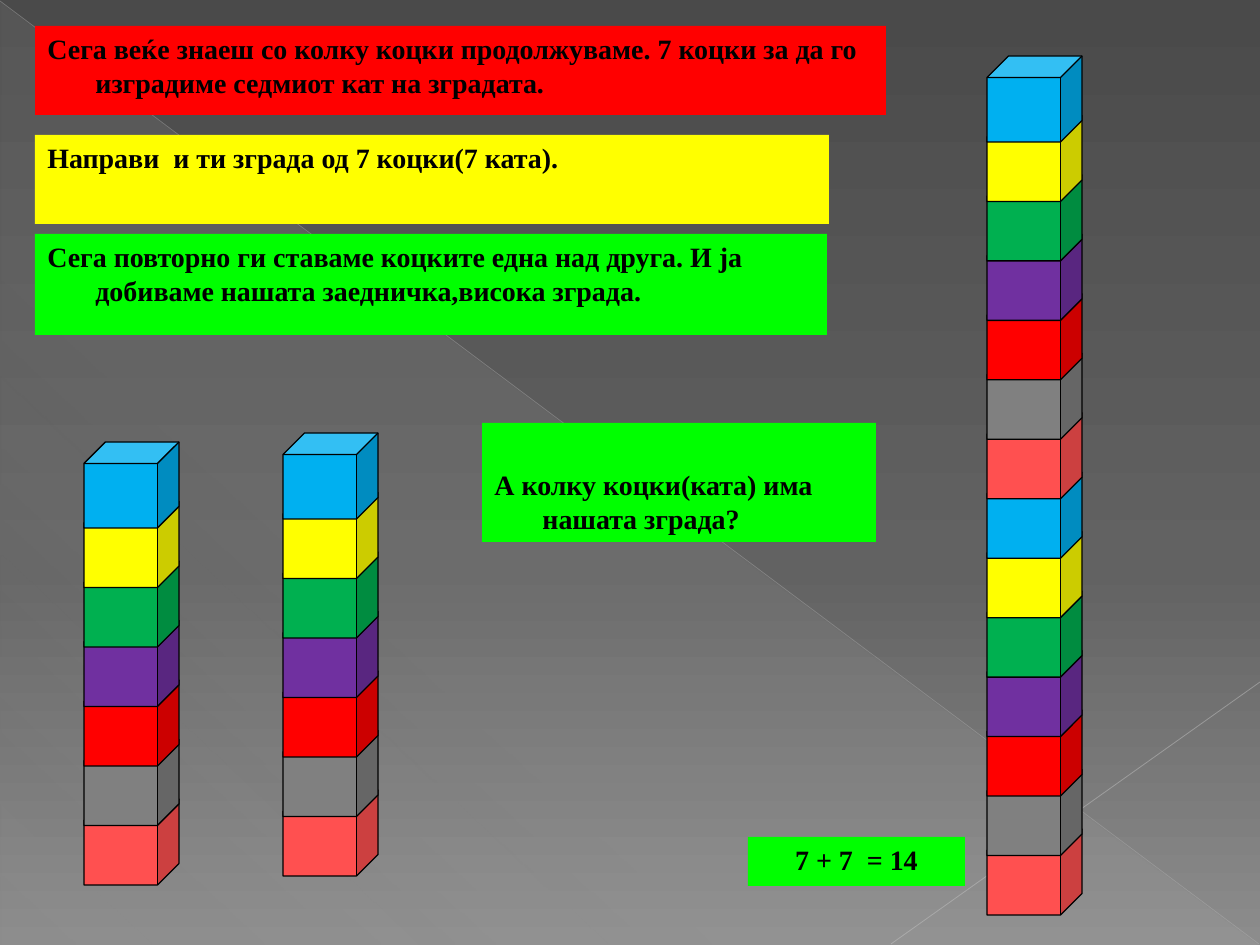
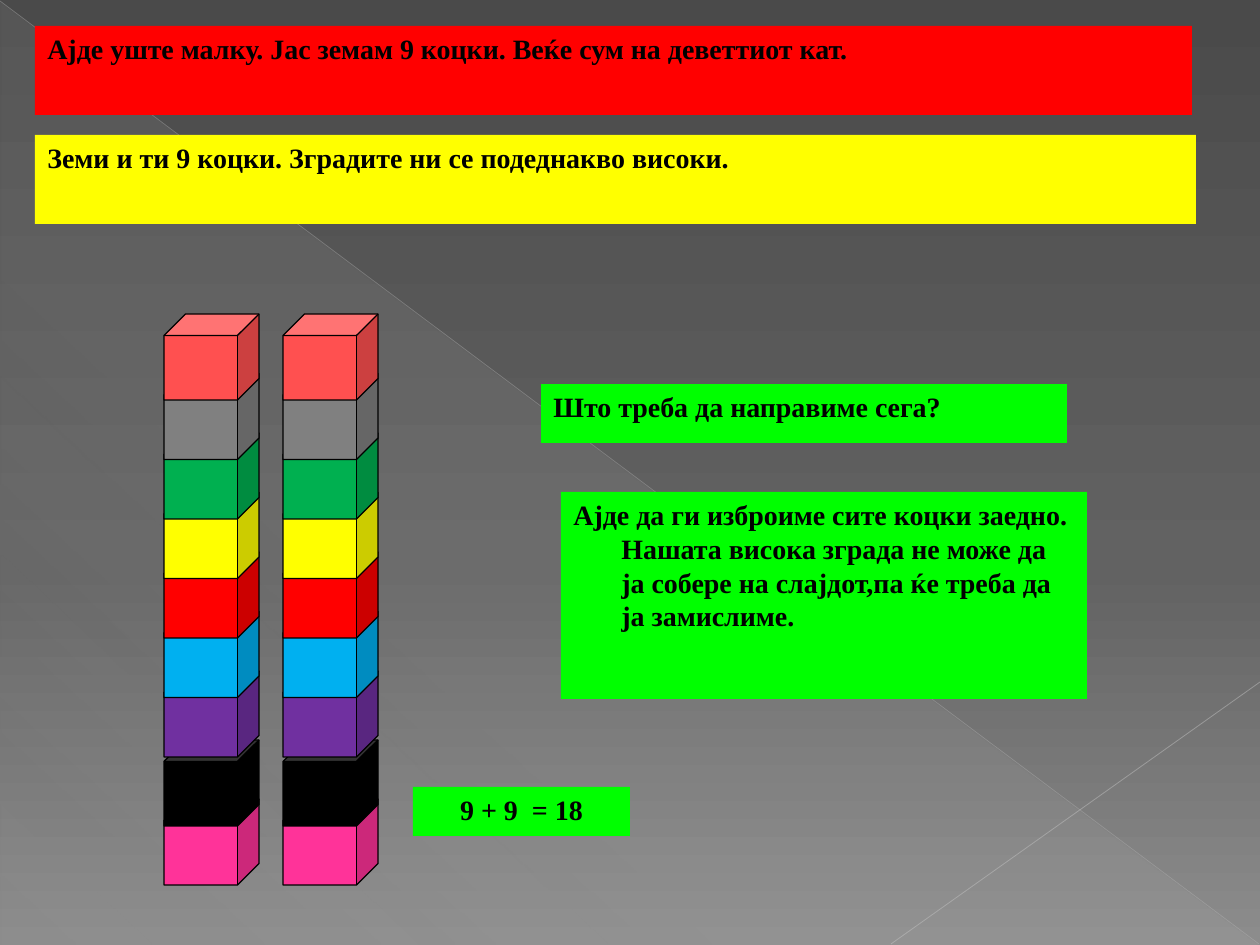
from dataclasses import dataclass

from lxml import etree
from pptx import Presentation
from pptx.dml.color import RGBColor
from pptx.enum.shapes import MSO_CONNECTOR, MSO_SHAPE
from pptx.enum.text import MSO_ANCHOR, PP_ALIGN
from pptx.oxml.ns import qn
from pptx.util import Emu, Pt

RECT, CUBE, WEDGE = MSO_SHAPE.RECTANGLE, MSO_SHAPE.CUBE, MSO_SHAPE.RIGHT_TRIANGLE
LINE = MSO_CONNECTOR.STRAIGHT
TOP, LEFT, MID = MSO_ANCHOR.TOP, PP_ALIGN.LEFT, PP_ALIGN.CENTER


@dataclass(frozen=True)
class Theme:
    font: str = "Times New Roman"
    size: int = 16
    edge: float = 0.75
    black: str = "000000"
    red: str = "FF0000"
    yellow: str = "FFFF00"
    lime: str = "00FF00"
    green: str = "00B050"
    blue: str = "00B0F0"
    purple: str = "7030A0"
    gray: str = "808080"
    coral: str = "FF5050"
    pink: str = "FF3399"
    back: tuple = ((0, "4A4A4A", 100), (60, "626262", 100), (100, "8C8C8C", 100))
    sheen: tuple = ((0, "D2D2D2", 10), (70, "D2D2D2", 8), (100, "D2D2D2", 1))
    rays: tuple = (("BFBFBF", 0.39, 35), ("C6C6C6", 0.47, 45))


T = Theme()
WIDE, HIGH = 1260, 945
CUBE_W, CUBE_H = 95, 86
HANG = 48
SEVEN = (T.blue, T.yellow, T.green, T.purple, T.red, T.gray, T.coral)
UPPER = (T.coral, T.gray, T.green, T.yellow, T.red, T.blue, T.purple)
LOWER = (T.black, T.pink)


def px(n):
    return Emu(round(n * 914400 / 126))


def fade(fill, root, stops, angle):
    fill.gradient()
    grad = next(root.iter(qn("a:gradFill")))
    grad.clear()
    group = etree.SubElement(grad, qn("a:gsLst"))
    for place, tone, alpha in stops:
        stop = etree.SubElement(group, qn("a:gs"), pos=str(place * 1000))
        color = etree.SubElement(stop, qn("a:srgbClr"), val=tone)
        etree.SubElement(color, qn("a:alpha"), val=str(alpha * 1000))
    etree.SubElement(grad, qn("a:lin"), ang=str(angle * 60000), scaled="0")


def add(slide, kind, box, tone=None):
    shape = slide.shapes.add_shape(kind, *map(px, box))
    shape.shadow.inherit = False
    shape.line.fill.background()
    if tone:
        shape.fill.solid()
        shape.fill.fore_color.rgb = RGBColor.from_string(tone)
    return shape


def ray(slide, start, end, tone, width, alpha):
    line = slide.shapes.add_connector(LINE, *map(px, start + end))
    line.line.width = Pt(width)
    line.line.color.rgb = RGBColor.from_string(tone)
    color = next(line.element.spPr.iter(qn("a:srgbClr")))
    etree.SubElement(color, qn("a:alpha"), val=str(alpha * 1000))
    etree.SubElement(line.element.spPr, qn("a:effectLst"))


def scene(slide, box):
    x, y, w, h = box
    fade(slide.background.fill, slide.element, T.back, 90)
    wedge = add(slide, WEDGE, (x + 1, y + 2, w - 2, h - 2))
    fade(wedge.fill, wedge.element, T.sheen, 133)
    ray(slide, (x, y + 1), (x + w - 1, y + h - 1), *T.rays[0])
    ray(slide, (x + w, y + 682), (x + 891, y + h - 1), *T.rays[1])


def note(slide, box, tone, text, align=LEFT, drop=0):
    frame = add(slide, RECT, box, tone).text_frame
    frame.word_wrap = True
    frame.vertical_anchor = TOP
    frame.margin_top = px(6 + drop)
    frame.text = text
    para = frame.paragraphs[0]
    para.alignment = align
    para.space_before = Pt(T.size / 5)
    props = para._p.get_or_add_pPr()
    props.set("marL", str(px(HANG)))
    props.set("indent", str(-px(HANG)))
    font = para.runs[0].font
    font.name, font.size, font.bold = T.font, Pt(T.size), True
    font.color.rgb = RGBColor.from_string(T.black)


def tower(slide, box, tones):
    x, y, w, h = box
    step = (h - CUBE_H) / (len(tones) - 1)
    for i, tone in reversed(list(enumerate(tones))):
        cube = add(slide, CUBE, (x, y + i * step, w, CUBE_H), tone)
        cube.line.color.rgb = RGBColor.from_string(T.black)
        cube.line.width = Pt(T.edge)


def seven(slide):
    scene(slide, (0, 0, WIDE, HIGH))
    note(slide, (35, 135, 794, 89), T.yellow,
         "Направи  и ти зграда од 7 коцки(7 ката).")
    note(slide, (35, 234, 792, 101), T.lime,
         "Сега повторно ги ставаме коцките една над друга. "
         "И ја добиваме нашата заедничка,висока зграда.")
    note(slide, (35, 26, 851, 89), T.red,
         "Сега веќе знаеш со колку коцки продолжуваме. "
         "7 коцки за да го изградиме седмиот кат на зградата.")
    tower(slide, (84, 442, CUBE_W, 443), SEVEN)
    tower(slide, (283, 433, CUBE_W, 443), SEVEN)
    tower(slide, (987, 56, CUBE_W, 859), SEVEN * 2)
    note(slide, (482, 423, 394, 119), T.lime,
         "А колку коцки(ката) има нашата зграда?", drop=39)
    note(slide, (748, 837, 217, 49), T.lime, "7 + 7  = 14", MID)


def nine(slide):
    scene(slide, (0, 0, WIDE, HIGH))
    note(slide, (35, 135, 1161, 89), T.yellow,
         "Земи и ти 9 коцки. Зградите ни се подеднакво високи.")
    note(slide, (35, 26, 1157, 89), T.red,
         "Ајде уште малку. Јас земам 9 коцки. Веќе сум на деветтиот кат.")
    for x in (164, 283):
        tower(slide, (x, 740, CUBE_W, 145), LOWER)
        tower(slide, (x, 314, CUBE_W, 443), UPPER)
    note(slide, (541, 384, 526, 59), T.lime, "Што треба да направиме сега?")
    note(slide, (561, 492, 526, 207), T.lime,
         "Ајде да ги изброиме сите коцки заедно. Нашата висока зграда "
         "не може да ја собере на слајдот,па ќе треба да ја замислиме.")
    note(slide, (413, 787, 217, 49), T.lime, "9 + 9  = 18", MID)


def main():
    deck = Presentation()
    deck.slide_width, deck.slide_height = px(WIDE), px(HIGH)
    for build in (seven, nine):
        build(deck.slides.add_slide(deck.slide_layouts[6]))
    deck.save("out.pptx")


if __name__ == "__main__":
    main()
